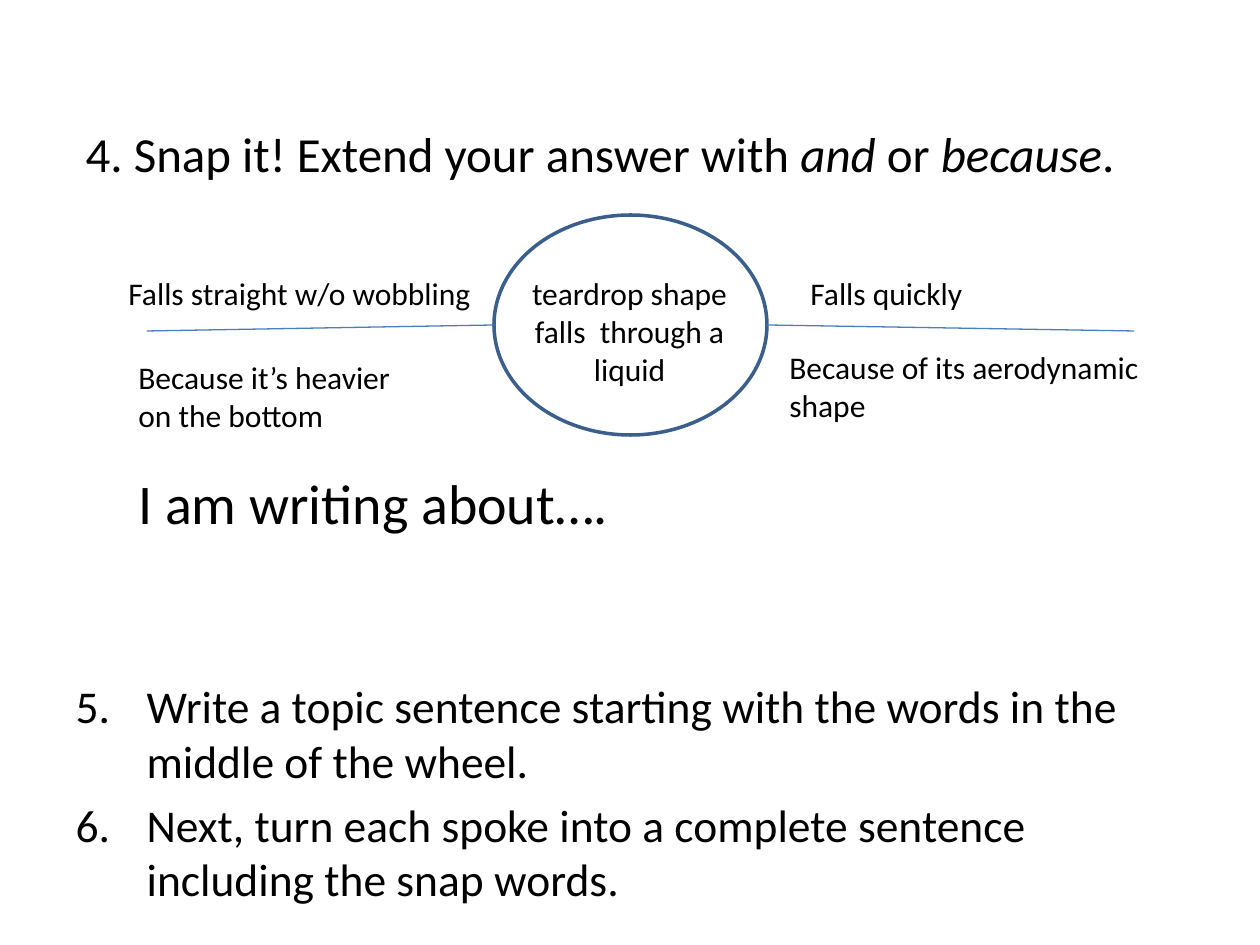
from lxml.etree import SubElement
from pptx import Presentation
from pptx.dml.color import RGBColor
from pptx.enum.shapes import MSO_CONNECTOR, MSO_SHAPE
from pptx.enum.text import MSO_ANCHOR, MSO_AUTO_SIZE, PP_ALIGN
from pptx.oxml.ns import qn
from pptx.util import Emu, Inches, Pt

FONT = "Calibri"
BLACK = "000000"
WHEEL_BLUE = "3A5F8C"
SPOKE_BLUE = "4B7EBC"
LABEL_SIZE = 18

HEADING = [("4. Snap it! Extend your answer with ", False), ("and", True),
           (" or ", False), ("because", True), (".", False)]
TASKS = ["Write a topic sentence starting with the words in the middle of the wheel.",
         "Next, turn each spoke into a complete sentence including the snap words."]
LABELS = [
    ((116, 268, 372, 51), LABEL_SIZE, ["Falls straight w/o wobbling"]),
    ((798, 268, 179, 51), LABEL_SIZE, ["Falls quickly"]),
    ((126, 352, 287, 89), LABEL_SIZE, ["Because it’s heavier", "on the bottom"]),
    ((777, 342, 378, 89), LABEL_SIZE, ["Because of its aerodynamic", "shape"]),
    ((126, 462, 501, 81), 32, ["I am writing about…."]),
]
WHEEL = (494, 215, 273, 220)
SPOKE_ENDS = (147, 1134)
SPOKE_END_Y = 331


def px(length):
    return Emu(round(length * 914400 / 126))


def color(hex_value):
    return RGBColor.from_string(hex_value)


def place(shape, box):
    shape.left, shape.top, shape.width, shape.height = map(px, box)


def add_run(paragraph, text, size, italic=False):
    run = paragraph.add_run()
    run.text = text
    run.font.name = FONT
    run.font.size = Pt(size)
    run.font.italic = italic
    run.font.color.rgb = color(BLACK)


def add_paragraphs(frame, lines, size, align=PP_ALIGN.LEFT):
    for index, line in enumerate(lines):
        paragraph = frame.add_paragraph() if index else frame.paragraphs[0]
        paragraph.alignment = align
        add_run(paragraph, line, size)


def add_label(slide, box, size, lines, align=PP_ALIGN.LEFT, wrap=False):
    frame = slide.shapes.add_textbox(*map(px, box)).text_frame
    frame.word_wrap = wrap
    add_paragraphs(frame, lines, size, align)


def fill_heading(title):
    place(title, (73, 117, 1066, 72))
    frame = title.text_frame
    frame.auto_size = MSO_AUTO_SIZE.NONE
    frame.vertical_anchor = MSO_ANCHOR.TOP
    frame.word_wrap = False
    frame.paragraphs[0].alignment = PP_ALIGN.LEFT
    for text, italic in HEADING:
        add_run(frame.paragraphs[0], text, 28, italic)


def fill_tasks(body, first_number):
    place(body, (63, 672, 1134, 242))
    frame = body.text_frame
    frame.auto_size = MSO_AUTO_SIZE.NONE
    add_paragraphs(frame, TASKS, 26)
    for paragraph in frame.paragraphs:
        properties = paragraph._p.get_or_add_pPr()
        properties.set("marL", str(px(71)))
        properties.set("indent", str(-px(71)))
        SubElement(properties, qn("a:buFont"), typeface="+mj-lt")
        SubElement(properties, qn("a:buAutoNum"), type="arabicPeriod",
                   startAt=str(first_number))


def add_wheel(slide):
    wheel = slide.shapes.add_shape(MSO_SHAPE.OVAL, *map(px, WHEEL))
    wheel.shadow.inherit = False
    wheel.fill.background()
    wheel.line.color.rgb = color(WHEEL_BLUE)
    wheel.line.width = Pt(2)
    add_label(slide, (514, 268, 231, 127), LABEL_SIZE,
              ["teardrop shape falls  through a liquid"], PP_ALIGN.CENTER, wrap=True)


def add_spokes(slide):
    left, top, width, height = WHEEL
    for rim_x, end_x in zip((left, left + width), SPOKE_ENDS):
        spoke = slide.shapes.add_connector(
            MSO_CONNECTOR.STRAIGHT, px(rim_x), px(top + height / 2),
            px(end_x), px(SPOKE_END_Y))
        spoke.line.color.rgb = color(SPOKE_BLUE)
        spoke.line.width = Pt(0.75)
        SubElement(spoke._element.spPr, qn("a:effectLst"))


def main():
    presentation = Presentation()
    presentation.slide_width, presentation.slide_height = Inches(10), Inches(7.5)
    title_and_content = presentation.slide_layouts[1]
    slide = presentation.slides.add_slide(title_and_content)
    fill_heading(slide.shapes.title)
    fill_tasks(slide.placeholders[1], first_number=5)
    add_wheel(slide)
    add_spokes(slide)
    for box, size, lines in LABELS:
        add_label(slide, box, size, lines)
    presentation.save("out.pptx")


if __name__ == "__main__":
    main()
